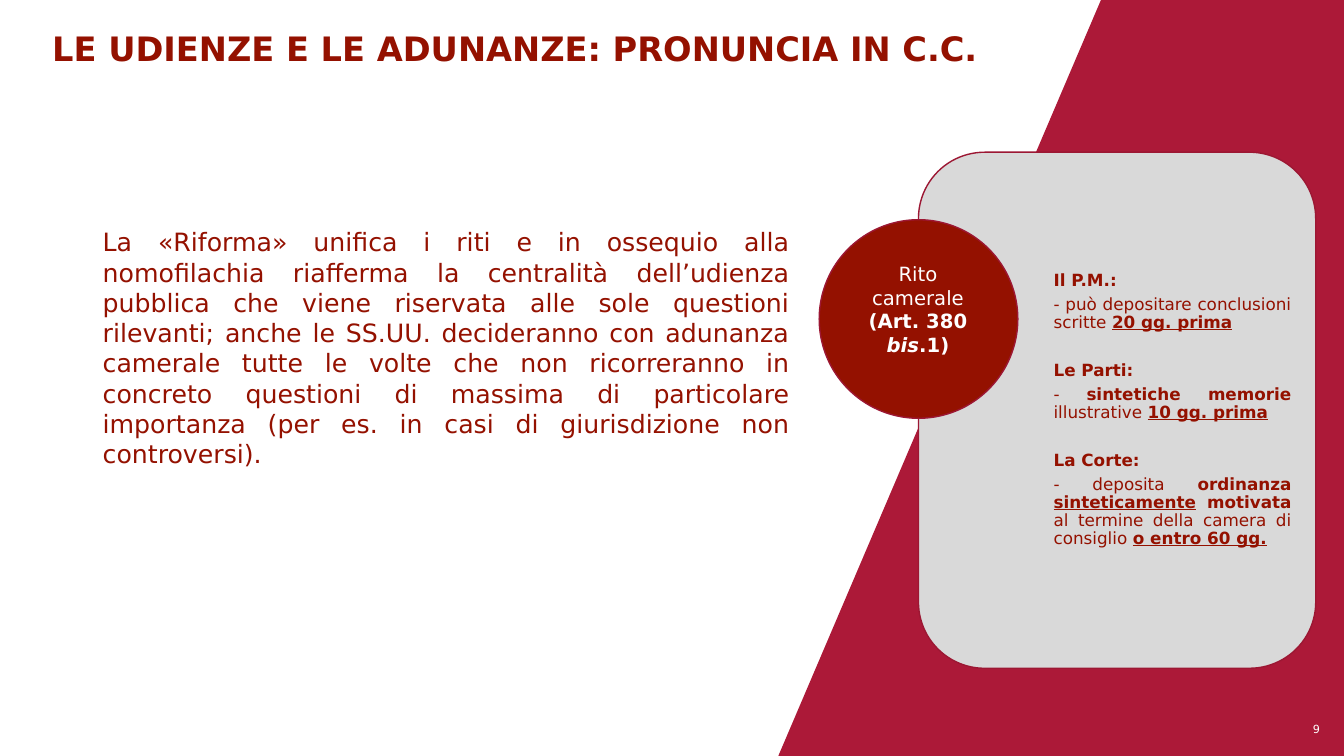
from pptx import Presentation
from pptx.dml.color import RGBColor
from pptx.enum.shapes import MSO_SHAPE as Shape
from pptx.enum.text import MSO_ANCHOR as Anchor, PP_ALIGN as Align
from pptx.util import Inches, Pt

CRIMSON = RGBColor(0xAC, 0x19, 0x38)
BRICK = RGBColor(0x94, 0x11, 0x00)
OUTLINE = RGBColor(0x9C, 0x17, 0x33)
GREY = RGBColor(0xD9, 0xD9, 0xD9)
WHITE = RGBColor(0xFF, 0xFF, 0xFF)
FONT = "DejaVu Sans"
WIDTH, HEIGHT = 13.33, 7.5

TITLE = "LE UDIENZE E LE ADUNANZE: PRONUNCIA IN C.C."
REFORM = (
    "La «Riforma» unifica i riti e in ossequio alla nomofilachia riafferma la "
    "centralità dell’udienza pubblica che viene riservata alle sole questioni "
    "rilevanti; anche le SS.UU. decideranno con adunanza camerale tutte le volte "
    "che non ricorreranno in concreto questioni di massima di particolare "
    "importanza (per es. in casi di giurisdizione non controversi)."
)
# Each span is (text, style): b bold, i italic, u underlined
RITE = [[("Rito camerale", "")], [("(Art. 380 ", "b"), ("bis", "bi"), (".1)", "b")]]
ACTORS = [
    ("Il P.M.:", [("- può depositare conclusioni scritte ", ""), ("20 gg. prima", "bu")]),
    ("Le Parti:", [("- ", ""), ("sintetiche memorie ", "b"), ("illustrative ", ""),
                   ("10 gg. prima", "bu")]),
    ("La Corte:", [("- deposita ", ""), ("ordinanza ", "b"), ("sinteticamente", "bu"),
                   (" ", ""), ("motivata", "b"),
                   (" al termine della camera di consiglio ", ""),
                   ("o entro 60 gg.", "bu")]),
]


def add_shape(page, kind, box, fill, line=None):
    shape = page.shapes.add_shape(kind, *map(Inches, box))
    shape.shadow.inherit = False
    shape.fill.solid()
    shape.fill.fore_color.rgb = fill
    if line is None:
        shape.line.fill.background()
    else:
        shape.line.color.rgb = line
        shape.line.width = Pt(1)
    return shape


def add_text(page, box, paras, size, color=BRICK, align=Align.JUSTIFY,
             anchor=Anchor.TOP, spacing=None, after=None, group=None,
             group_gap=0, left=0.1, right=0.1, wrap=True):
    """Write paragraphs of spans; every group-th one starts after a gap."""
    frame = page.shapes.add_textbox(*map(Inches, box)).text_frame
    frame.word_wrap = wrap
    frame.vertical_anchor = anchor
    frame.margin_left, frame.margin_right = Inches(left), Inches(right)
    for index, spans in enumerate(paras):
        para = frame.paragraphs[0] if index == 0 else frame.add_paragraph()
        para.alignment = align
        if spacing:
            para.line_spacing = spacing
        if after:
            para.space_after = Pt(after)
        if group and index and index % group == 0:
            para.space_before = Pt(group_gap)
        for text, style in spans:
            span = para.add_run()
            span.text = text
            font = span.font
            font.name, font.size, font.color.rgb = FONT, Pt(size), color
            font.bold, font.italic = "b" in style, "i" in style
            font.underline = "u" in style


def draw_background(page, left, middle):
    """Crimson band whose left edge slopes from middle (top) to left (bottom)."""
    add_shape(page, Shape.RECTANGLE, (middle, 0, WIDTH - middle, HEIGHT), CRIMSON)
    slope = add_shape(page, Shape.RIGHT_TRIANGLE, (left, 0, middle - left, HEIGHT), CRIMSON)
    slope._element.spPr.xfrm.set("flipH", "1")


def draw_rite_panel(page, left, top, width, height):
    """Rounded panel with the actors' duties and a disc on its left edge."""
    add_shape(page, Shape.ROUNDED_RECTANGLE, (left, top, width, height), GREY, OUTLINE)
    inset = 0.19
    duties = [spans for name, duty in ACTORS for spans in ([(name, "b")], duty)]
    add_text(page, (left + inset, top + inset, width - 2 * inset, height - 2 * inset),
             duties, 12, anchor=Anchor.MIDDLE, spacing=0.9, after=4.2,
             group=2, group_gap=17, left=1.15, right=0.05)

    # Disc, centred on the panel's left edge
    disc = width / 2
    disc_left, disc_top = left - disc / 2, top + 0.67
    add_shape(page, Shape.OVAL, (disc_left, disc_top, disc, disc), BRICK, OUTLINE)
    add_text(page, (disc_left + 0.35, disc_top + 0.37, 1.26, 1.04),
             RITE, 14, WHITE, Align.CENTER)


def main():
    deck = Presentation()
    deck.slide_width, deck.slide_height = Inches(WIDTH), Inches(HEIGHT)
    page = deck.slides.add_slide(deck.slide_layouts[6])

    draw_background(page, 7.72, 10.92)
    # Title
    add_text(page, (0.42, 0.21, 9.63, 0.52), [[(TITLE, "b")]], 24,
             anchor=Anchor.BOTTOM, spacing=0.9)
    draw_rite_panel(page, 9.11, 1.51, 3.94, 5.12)
    # Body text
    add_text(page, (0.92, 2.2, 7.01, 2.52), [[(REFORM, "")]], 18)
    # Page number
    add_text(page, (12.92, 7.12, 0.27, 0.24), [[("9", "")]], 8, WHITE,
             Align.RIGHT, wrap=False)
    deck.save("out.pptx")


if __name__ == "__main__":
    main()
